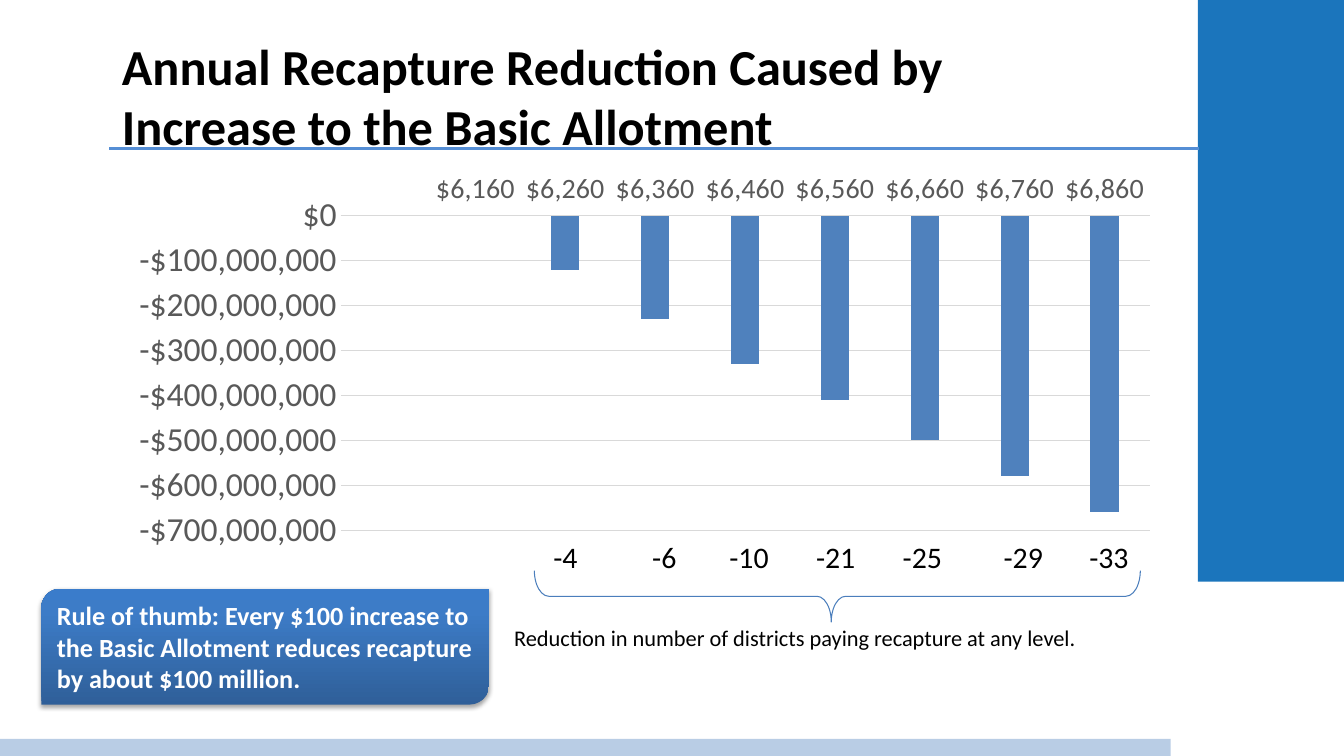
from dataclasses import dataclass

from lxml import etree
from pptx import Presentation
from pptx.chart.data import CategoryChartData as ChartData
from pptx.dml.color import RGBColor as RGB
from pptx.enum.chart import XL_CHART_TYPE as CHART, XL_TICK_LABEL_POSITION as LABELS
from pptx.enum.chart import XL_TICK_MARK as TICK
from pptx.enum.shapes import MSO_CONNECTOR as CONNECTOR, MSO_SHAPE as SHAPE
from pptx.enum.text import MSO_ANCHOR as ANCHOR, MSO_AUTO_SIZE as AUTO, PP_ALIGN as ALIGN
from pptx.oxml import parse_xml
from pptx.oxml.ns import qn
from pptx.util import Pt

PX = 9144  # EMU per px, 100 px to the inch
DRAWING = 'xmlns:a="http://schemas.openxmlformats.org/drawingml/2006/main"'


@dataclass(frozen=True)
class Theme:
    font: str = "Calibri"
    ink: str = "000000"
    paper: str = "FFFFFF"
    panel: str = "1B75BC"
    footer: str = "B9CDE5"
    rule: str = "558ED5"
    brace: str = "4B7EBC"
    bar: str = "4F81BD"
    axis: str = "595959"
    grid: str = "D9D9D9"
    callout: tuple = ((0, "2F5F99"), (80, "3D7CC7"), (100, "3A7CCB"))
    title_size: float = 36
    value_size: float = 24
    category_size: float = 20
    count_size: float = 21.3
    caption_size: float = 16
    callout_size: float = 18.7


def emu(*lengths):
    return [length * PX for length in lengths]


def style_font(font, size, color, bold=False):
    font.name, font.size, font.bold = Theme.font, Pt(size), bold
    font.color.rgb = RGB.from_string(color)


def write(frame, text, size, color=Theme.ink, bold=False, anchor=ANCHOR.TOP, tabs=()):
    frame.word_wrap = True
    frame.auto_size = AUTO.NONE
    frame.vertical_anchor = anchor
    paragraph = frame.paragraphs[0]
    paragraph.alignment = ALIGN.LEFT
    if tabs:
        stops = etree.SubElement(paragraph._p.get_or_add_pPr(), qn("a:tabLst"))
        for position in tabs:
            etree.SubElement(stops, qn("a:tab"), pos=str(position * PX), algn="ctr")
    run = paragraph.add_run()
    run.text = text
    style_font(run.font, size, color, bold)


class SlideBuilder:
    def __init__(self, width, height, theme):
        self.theme = theme
        self.deck = Presentation()
        self.deck.slide_width, self.deck.slide_height = emu(width, height)
        self.slide = self.deck.slides.add_slide(self.deck.slide_layouts[5])
        self.shapes = self.slide.shapes

    def title(self, text, *box):
        heading = self.shapes.title
        heading.left, heading.top, heading.width, heading.height = emu(*box)
        write(heading.text_frame, text, self.theme.title_size, bold=True, anchor=ANCHOR.MIDDLE)

    def shape(self, kind, *box, fill=None, line=None):
        shape = self.shapes.add_shape(kind, *emu(*box))
        shape.shadow.inherit = False
        if fill:
            shape.fill.solid()
            shape.fill.fore_color.rgb = RGB.from_string(fill)
        else:
            shape.fill.background()
        if line:
            shape.line.color.rgb = RGB.from_string(line)
            shape.line.width = Pt(0.75)
        else:
            shape.line.fill.background()
        return shape

    def line(self, *ends, color, width):
        rule = self.shapes.add_connector(CONNECTOR.STRAIGHT, *emu(*ends))
        rule.line.color.rgb = RGB.from_string(color)
        rule.line.width = Pt(width)
        etree.SubElement(rule._element.spPr, qn("a:effectLst"))

    def text(self, text, *box, **style):
        write(self.shapes.add_textbox(*emu(*box)).text_frame, text, **style)

    def callout(self, text, *box):
        callout = self.shape(SHAPE.ROUND_2_DIAG_RECTANGLE, *box)
        properties = callout._element.spPr
        stops = "".join(f'<a:gs pos="{at * 1000}"><a:srgbClr val="{color}"/></a:gs>'
                        for at, color in self.theme.callout)
        properties.replace(properties.find(qn("a:noFill")), parse_xml(
            f'<a:gradFill {DRAWING} rotWithShape="1"><a:gsLst>{stops}</a:gsLst>'
            '<a:lin ang="16200000" scaled="0"/></a:gradFill>'))
        properties.find(qn("a:effectLst")).append(parse_xml(
            f'<a:outerShdw {DRAWING} blurRad="{Pt(3.1)}" dist="{Pt(1.8)}" dir="5400000" '
            'rotWithShape="0"><a:srgbClr val="000000"><a:alpha val="35000"/></a:srgbClr>'
            '</a:outerShdw>'))
        write(callout.text_frame, text, self.theme.callout_size, self.theme.paper,
              bold=True, anchor=ANCHOR.MIDDLE)

    def column_chart(self, categories, values, *box, plot_area):
        theme = self.theme
        data = ChartData()
        data.categories = categories
        data.add_series("Series 1", values)
        chart = self.shapes.add_chart(CHART.COLUMN_CLUSTERED, *emu(*box), data).chart
        chart.has_legend = chart.has_title = False
        style_font(chart.font, 10, theme.ink)

        # Columns
        plot = chart.plots[0]
        plot.gap_width, plot.overlap, plot.vary_by_categories = 219, -27, False
        columns = plot.series[0]
        columns.invert_if_negative = False
        columns.format.fill.solid()
        columns.format.fill.fore_color.rgb = RGB.from_string(theme.bar)

        # Axes
        category, value = chart.category_axis, chart.value_axis
        for axis, size in (category, theme.category_size), (value, theme.value_size):
            axis.major_tick_mark = axis.minor_tick_mark = TICK.NONE
            style_font(axis.tick_labels.font, size, theme.axis)
        category.tick_label_position = LABELS.HIGH
        value.minimum_scale, value.maximum_scale = -700_000_000, 0
        value.major_unit = 100_000_000
        value.tick_labels.number_format = '"$"#,##0'
        value.tick_labels.number_format_is_linked = False
        value.format.line.fill.background()
        for line in category.format.line, value.major_gridlines.format.line:
            line.color.rgb = RGB.from_string(theme.grid)
            line.width = Pt(0.75)

        # Plot area as shares of the chart
        area = chart._chartSpace.chart.plotArea
        for old in area.findall(qn("c:layout")):
            area.remove(old)
        layout = etree.Element(qn("c:layout"))
        manual = etree.SubElement(layout, qn("c:manualLayout"))
        settings = [("layoutTarget", "inner"), ("xMode", "edge"), ("yMode", "edge")]
        for name, setting in settings + list(zip("xywh", plot_area)):
            etree.SubElement(manual, qn(f"c:{name}"), val=str(setting))
        area.insert(0, layout)


def main():
    theme = Theme()
    page = SlideBuilder(1333, 750, theme)

    # Page frame and title
    page.shape(SHAPE.RECTANGLE, 1188, 0, 145, 577, fill=theme.panel)
    page.shape(SHAPE.RECTANGLE, 0, 733, 1161, 20, fill=theme.footer)
    page.line(1189, 147, 108, 147, color=theme.rule, width=2.25)
    page.title("Annual Recapture Reduction Caused by Increase to the Basic Allotment",
               111, 53, 1002, 83)

    # Recapture reduction by basic allotment
    allotments = [""] + [f"${amount:,}" for amount in range(6160, 6861, 100)]
    millions = [0, -120, -230, -330, -410, -500, -580, -660]
    reductions = [None] + [amount * 1_000_000 for amount in millions]
    page.column_chart(allotments, reductions, 119, 168, 1042, 385,
                      plot_area=(0.21, 0.12, 0.77, 0.81))

    # Fewer districts paying, one count under each column
    districts = {-4: 387, -6: 485, -10: 569, -21: 655, -25: 741, -29: 841, -33: 926}
    page.text("".join(f"\t{count}" for count in districts), 164, 530, 1057, 46,
              size=theme.count_size, tabs=districts.values())
    brace = page.shape(SHAPE.LEFT_BRACE, 805, 291, 51, 601, line=theme.brace)
    brace.rotation = 270
    brace.adjustments[0], brace.adjustments[1] = 0.28, 0.49
    page.text("Reduction in number of districts paying recapture at any level.",
              500, 614, 661, 37, size=theme.caption_size)

    # Rule of thumb
    page.callout("Rule of thumb: Every $100 increase to the Basic Allotment reduces "
                 "recapture by about $100 million.", 41, 584, 444, 115)

    page.deck.save("out.pptx")


if __name__ == "__main__":
    main()
